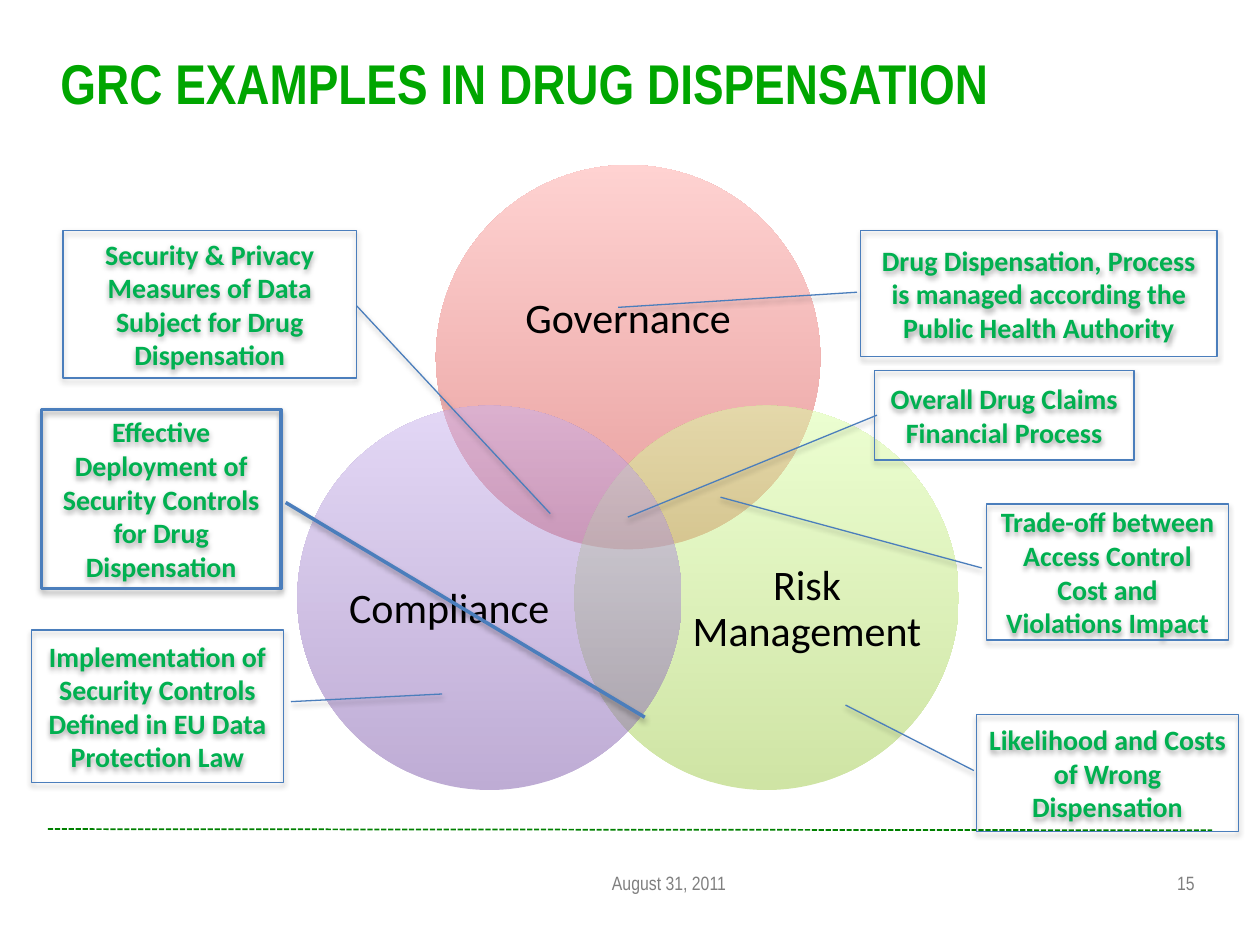
"""Build the Venn slide of GRC examples in drug dispensation."""
from dataclasses import dataclass

from lxml import etree
from pptx import Presentation
from pptx import util as u
from pptx.dml.color import RGBColor
from pptx.enum import dml, shapes, text
from pptx.oxml import ns

DIAMETER = 3.05


@dataclass
class Circle:
    label: str
    left: float
    top: float
    dark: str
    light: str
    label_box: tuple[float, float, float, float]


@dataclass
class Callout:
    label: str
    box: tuple[float, float, float, float]
    pointer: tuple[float, float, float, float]
    weight: float = 0.75


CIRCLES = [
    Circle("Governance", 3.46, 1.31, "D1403C", "FFA6A5", (3.87, 1.85, 2.23, 1.37)),
    Circle("Risk Management", 4.56, 3.22, "A0CA4A", "DAFFA5", (5.49, 4, 1.83, 1.68)),
    Circle("Compliance", 2.36, 3.22, "7F5BAB", "C8B0ED", (2.65, 4, 1.83, 1.68)),
]

CALLOUTS = [
    Callout("Likelihood and Costs of Wrong Dispensation",
            (7.75, 5.67, 2.08, 0.93), (0.48, -0.01, -0.08, -0.5)),
    Callout("Drug Dispensation, Process is managed according the Public Health Authority",
            (6.83, 1.83, 2.83, 1), (0.49, -0.01, 0.61, -0.68)),
    Callout("Overall Drug Claims Financial Process",
            (6.94, 2.94, 2.06, 0.71), (0.5, 0.01, 1.64, -0.95)),
    Callout("Trade-off between Access Control Cost and Violations Impact",
            (7.83, 4, 1.92, 1.08), (0.47, -0.02, -0.05, -1.1)),
    Callout("Implementation of Security Controls Defined in EU Data Protection Law",
            (0.25, 5, 2, 1.21), (0.47, 1.03, 0.42, 1.63)),
    Callout("Effective Deployment of Security Controls for Drug Dispensation",
            (0.33, 3.25, 1.9, 1.42), (0.52, 1.02, 1.72, 2.52), 2),
    Callout("Security & Privacy Measures of Data Subject for Drug Dispensation",
            (0.5, 1.83, 2.33, 1.17), (0.51, 1, 1.92, 1.66)),
]


def color(value: str) -> RGBColor:
    """Turn a hex string into a colour."""
    return RGBColor.from_string(value)


def inches(*lengths: float) -> list[u.Length]:
    """Convert lengths to inches."""
    return [u.Inches(length) for length in lengths]


def write(shape, content: str, *, size: float, font: str, fill: str, bold=False,
          align=text.PP_ALIGN.CENTER, spacing=1.0, inset=(0.1, 0.05)) -> None:
    """Put one formatted, vertically centred paragraph into a shape."""
    frame = shape.text_frame
    frame.word_wrap = True
    frame.auto_size = text.MSO_AUTO_SIZE.NONE
    frame.vertical_anchor = text.MSO_ANCHOR.MIDDLE
    frame.margin_left = frame.margin_right = u.Inches(inset[0])
    frame.margin_top = frame.margin_bottom = u.Inches(inset[1])
    paragraph = frame.paragraphs[0]
    paragraph.alignment = align
    paragraph.line_spacing = spacing
    run = paragraph.add_run()
    run.text = content
    run.font.size = u.Pt(size)
    run.font.name = font
    run.font.bold = bold
    run.font.color.rgb = color(fill)


def add_label(slide, box: tuple[float, ...], content: str, **formatting) -> None:
    """Add a text box with formatted text."""
    write(slide.shapes.add_textbox(*inches(*box)), content, **formatting)


def add_title(slide, content: str) -> None:
    """Place and fill the title placeholder."""
    title = slide.shapes.title
    title.left, title.top, title.width, title.height = inches(0.38, 0.3, 9.25, 0.7)
    write(title, content, size=32, font="Arial Narrow", fill="00A600", bold=True,
          align=text.PP_ALIGN.LEFT)


def add_rule(slide) -> None:
    """Draw the dashed line above the footer."""
    rule = slide.shapes.add_connector(
        shapes.MSO_CONNECTOR.STRAIGHT, *inches(0.38, 6.58, 9.62, 6.59))
    rule.line.color.rgb = color("008000")
    rule.line.width = u.Pt(1)
    rule.line.dash_style = dml.MSO_LINE.SQUARE_DOT
    etree.SubElement(rule._element.spPr, ns.qn("a:effectLst"))


def add_circle(slide, circle: Circle) -> None:
    """Draw a half-transparent gradient circle and its label."""
    shape = slide.shapes.add_shape(
        shapes.MSO_SHAPE.OVAL, *inches(circle.left, circle.top, DIAMETER, DIAMETER))
    shape.fill.gradient()
    shape.fill.gradient_angle = 90
    for stop, value, position in zip(
            shape.fill.gradient_stops, (circle.dark, circle.light), (0, 1)):
        stop.color.rgb = color(value)
        stop.position = position
    for element in shape._element.spPr.iter(ns.qn("a:srgbClr")):
        etree.SubElement(element, ns.qn("a:alpha"), val="50000")
    shape.line.fill.background()
    shape.shadow.inherit = False
    add_label(slide, circle.label_box, circle.label, size=24, font="Calibri",
              fill="000000", spacing=0.9, inset=(0, 0))


def add_shadow(shape) -> None:
    """Give a shape a soft shadow below it."""
    shape.shadow.inherit = False
    effects = shape._element.spPr.find(ns.qn("a:effectLst"))
    shadow = etree.SubElement(
        effects, ns.qn("a:outerShdw"), blurRad=str(u.Pt(3.1)), dist=str(u.Pt(1.8)),
        dir="5400000", rotWithShape="0")
    shade = etree.SubElement(shadow, ns.qn("a:srgbClr"), val="000000")
    etree.SubElement(shade, ns.qn("a:alpha"), val="35000")


def add_callout(slide, callout: Callout) -> None:
    """Draw an outlined callout with its pointer line."""
    shape = slide.shapes.add_shape(
        shapes.MSO_SHAPE.LINE_CALLOUT_1, *inches(*callout.box))
    for index, value in enumerate(callout.pointer):
        shape.adjustments[index] = value
    shape.fill.background()
    shape.line.color.rgb = color("4B7EBC")
    shape.line.width = u.Pt(callout.weight)
    add_shadow(shape)
    write(shape, callout.label, size=16, font="Calibri", fill="00B050", bold=True)


def main() -> None:
    """Build and save the presentation."""
    presentation = Presentation()
    presentation.slide_width, presentation.slide_height = inches(10, 7.5)
    slide = presentation.slides.add_slide(presentation.slide_layouts[5])
    add_rule(slide)
    add_title(slide, "GRC EXAMPLES IN DRUG DISPENSATION")
    for circle in CIRCLES:
        add_circle(slide, circle)
    for callout in CALLOUTS:
        add_callout(slide, callout)
    footer = dict(size=11, font="Arial Narrow", fill="7F7F7F")
    add_label(slide, (4.62, 6.81, 1.38, 0.4), "August 31, 2011", **footer)
    add_label(slide, (8.58, 6.81, 1, 0.4), "15", align=text.PP_ALIGN.RIGHT, **footer)
    presentation.save("out.pptx")


if __name__ == "__main__":
    main()
